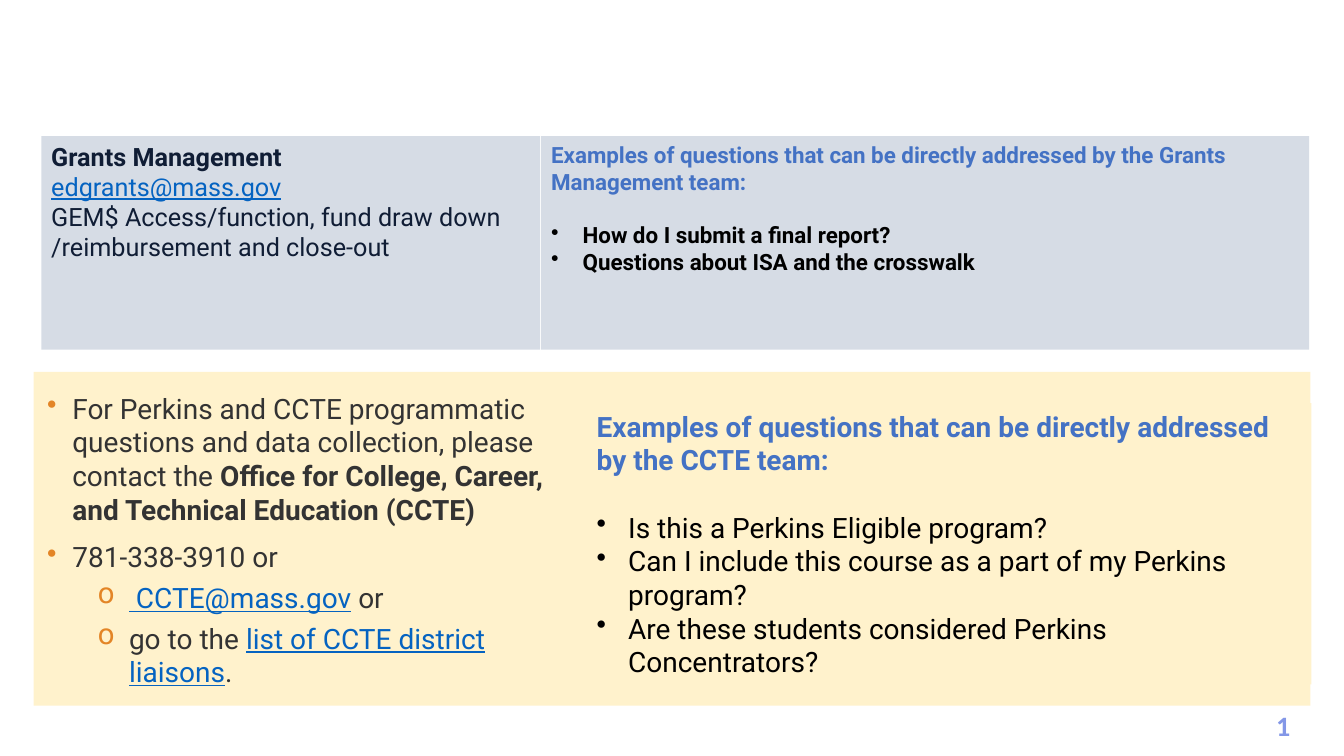
from lxml import etree
from pptx import Presentation
from pptx.dml.color import RGBColor
from pptx.enum.shapes import MSO_SHAPE
from pptx.enum.text import MSO_ANCHOR, MSO_AUTO_SIZE, PP_ALIGN
from pptx.oxml.ns import qn
from pptx.util import Pt

RECTANGLE = MSO_SHAPE.RECTANGLE
TOP, MIDDLE = MSO_ANCHOR.TOP, MSO_ANCHOR.MIDDLE
LEFT, CENTER = PP_ALIGN.LEFT, PP_ALIGN.CENTER
NO_AUTOSIZE = MSO_AUTO_SIZE.NONE
TITLE_ONLY = 5

CREAM, GREY = "FFF2CC", "D6DCE5"
NAVY, BLUE, LINK = "101D35", "4472C4", "0563C1"
BLACK, CHARCOAL, ORANGE, PERIWINKLE = "000000", "333333", "E38526", "8397E7"


def rgb(value):
    """Return the colour for a hex string."""
    return RGBColor.from_string(value)


def style_font(font, size, color, bold=False, underline=False, name="Roboto"):
    """Set the look of a font."""
    font.name, font.size, font.bold = name, Pt(size), bold
    font.underline = underline
    font.color.rgb = rgb(color)


def add_panel(slide, left, top, width, height, fill):
    """Add a borderless filled rectangle."""
    panel = slide.shapes.add_shape(RECTANGLE, Pt(left), Pt(top), Pt(width), Pt(height))
    panel.shadow.inherit = False
    panel.fill.solid()
    panel.fill.fore_color.rgb = rgb(fill)
    panel.line.fill.background()
    return panel


def add_text_box(slide, left, top, width, height):
    """Add an empty text box."""
    return slide.shapes.add_textbox(Pt(left), Pt(top), Pt(width), Pt(height))


def add_bullet(paragraph, mark, indent, hanging, color):
    """Give a paragraph a bullet with a hanging indent."""
    properties = paragraph._p.get_or_add_pPr()
    properties.set("marL", str(Pt(indent)))
    properties.set("indent", str(-Pt(hanging)))
    bullet_color = etree.SubElement(properties, qn("a:buClr"))
    etree.SubElement(bullet_color, qn("a:srgbClr"), val=color)
    etree.SubElement(properties, qn("a:buChar"), char=mark)


def write_paragraphs(shape, paragraphs, size, anchor=TOP):
    """Fill a shape with (runs, space before, bullet) paragraphs."""
    frame = shape.text_frame
    frame.word_wrap = True
    frame.auto_size = NO_AUTOSIZE
    frame.vertical_anchor = anchor
    for index, (runs, space_before, bullet) in enumerate(paragraphs):
        paragraph = frame.add_paragraph() if index else frame.paragraphs[0]
        if bullet:
            add_bullet(paragraph, *bullet)
        paragraph.alignment = LEFT
        paragraph.space_before = Pt(space_before)
        for text, *look in runs:
            run = paragraph.add_run()
            run.text = text
            style_font(run.font, size, *look)


def write_questions(shape, heading, questions, size, gap, bold, anchor=TOP):
    """Write a blue heading followed by bulleted questions."""
    bullet = ("•", 22.5, 22.5, BLACK)
    paragraphs = [([(heading, BLUE, True)], 0, None)]
    for index, question in enumerate(questions):
        paragraphs.append(([(question, BLACK, bold)], 0 if index else gap, bullet))
    write_paragraphs(shape, paragraphs, size, anchor)


def add_slide_number(slide):
    """Add the slide number as a field."""
    box = add_text_box(slide, 894.24, 502.6, 44.6, 31.7)
    paragraph = box.text_frame.paragraphs[0]
    paragraph.alignment = CENTER
    style_font(paragraph.font, 20, PERIWINKLE, True, name="Calibri")
    field = etree.SubElement(paragraph._p, qn("a:fld"), type="slidenum",
                             id="{B6F15528-21DE-4FAA-801E-634DDDAF4B2B}")
    properties = etree.SubElement(field, qn("a:rPr"), lang="en-US", sz="2000", b="1")
    fill = etree.SubElement(properties, qn("a:solidFill"))
    etree.SubElement(fill, qn("a:srgbClr"), val=PERIWINKLE)
    etree.SubElement(properties, qn("a:latin"), typeface="Calibri")
    etree.SubElement(field, qn("a:t")).text = "4"


def main():
    """Build the contact slide."""
    deck = Presentation()
    deck.slide_width, deck.slide_height = Pt(960), Pt(540)
    slide = deck.slides.add_slide(deck.slide_layouts[TITLE_ONLY])

    add_slide_number(slide)
    add_panel(slide, 24, 265.7, 912, 238.3, CREAM)

    grants_contact = add_panel(slide, 29.5, 97.2, 356.4, 152.6, GREY)
    write_paragraphs(grants_contact, [
        ([("Grants Management", NAVY, True)], 0, None),
        ([("edgrants@mass.gov", LINK, False, True)], 0, None),
        ([("GEM$ Access/function, fund draw down /reimbursement and close-out", NAVY)],
         0, None),
    ], 18)

    grants_questions = add_panel(slide, 386.6, 97.2, 548.6, 152.6, GREY)
    write_questions(
        grants_questions,
        "Examples of questions that can be directly addressed by the Grants Management team:",
        ["How do I submit a final report?", "Questions about ISA and the crosswalk"],
        16, 19, True)

    ccte_contact = add_text_box(slide, 26.6, 276, 377.3, 224)
    main_bullet = ("•", 18, 18, ORANGE)
    sub_bullet = ("o", 58.5, 22.5, ORANGE)
    write_paragraphs(ccte_contact, [
        ([("For Perkins and CCTE programmatic questions and data collection, "
           "please contact the ", CHARCOAL),
          ("Office for College, Career, and Technical Education (CCTE)", CHARCOAL, True)],
         0, main_bullet),
        ([("781-338-3910 or", CHARCOAL)], 10, main_bullet),
        ([(" CCTE@mass.gov", LINK, False, True), (" or", CHARCOAL)], 5, sub_bullet),
        ([("go to the ", CHARCOAL),
          ("list of CCTE district liaisons", LINK, False, True),
          (".", CHARCOAL)], 5, sub_bullet),
    ], 20)

    title = slide.shapes.title
    title.left, title.top, title.width, title.height = Pt(419), Pt(288), Pt(517.7), Pt(200.9)
    title.fill.solid()
    title.fill.fore_color.rgb = rgb(CREAM)
    write_questions(
        title,
        "Examples of questions that can be directly addressed by the CCTE team:",
        ["Is this a Perkins Eligible program?",
         "Can I include this course as a part of my Perkins program?",
         "Are these students considered Perkins Concentrators?"],
        20, 24, False, MIDDLE)
    slide.shapes._spTree.append(title._element)

    deck.save("out.pptx")


if __name__ == "__main__":
    main()
